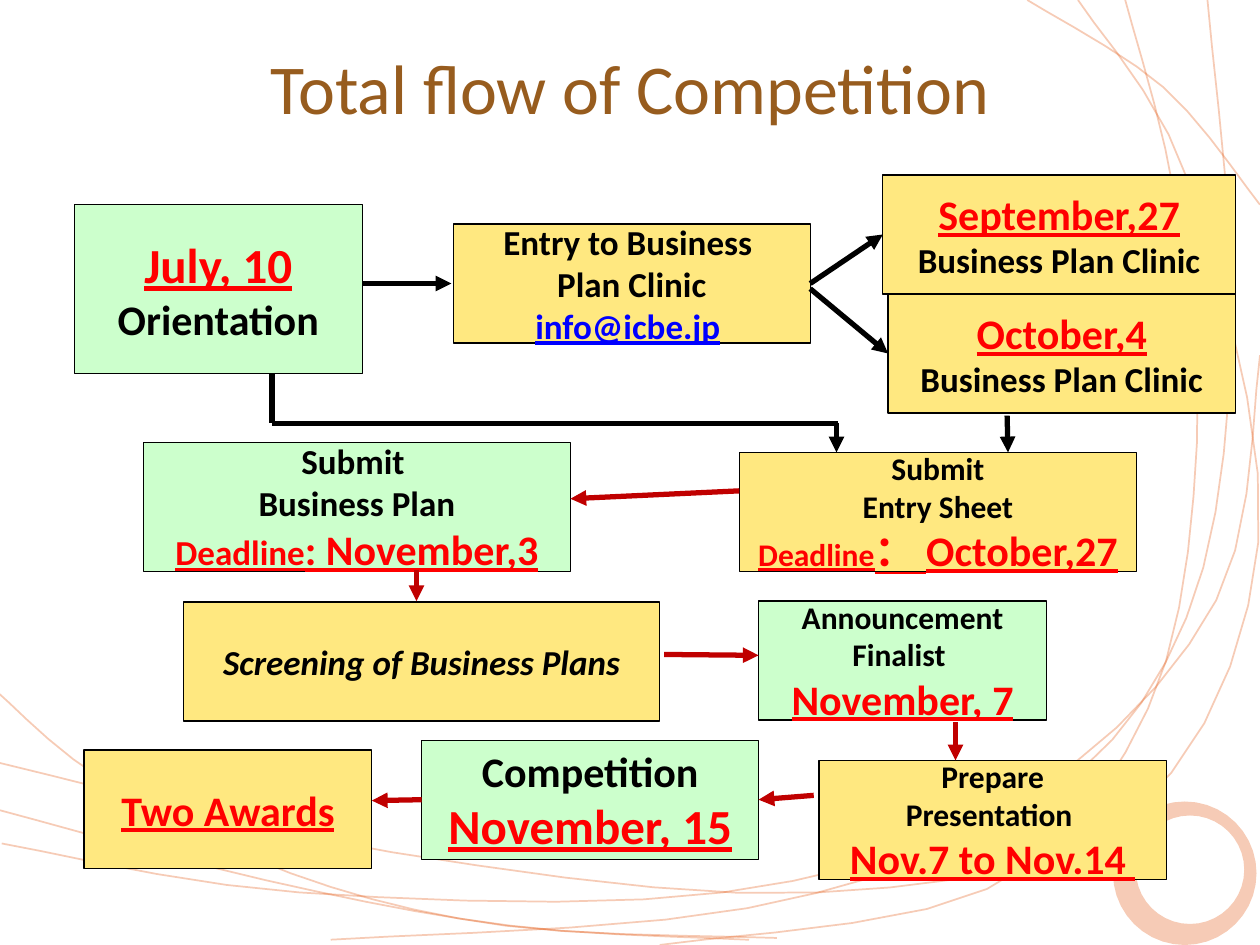
"""Builds the competition flow slide: schedule boxes joined by arrows over curved strands."""
import math
from dataclasses import dataclass

import pptx
import pptx.dml.color
import pptx.enum.shapes
import pptx.enum.text
import pptx.oxml
import pptx.oxml.ns
import pptx.util

Pt = pptx.util.Pt


@dataclass(frozen=True)
class Theme:
    font: str = "Calibri"
    title: str = "975C1E"
    ink: str = "000000"
    date: str = "FF0000"
    address: str = "0000FE"
    milestone: str = "CCFFCC"
    step: str = "FFE880"
    review: str = "C00000"
    strand: str = "E3560E"
    title_size: int = 40
    huge: int = 28
    large: int = 24
    medium: int = 20
    small: int = 18


THEME = Theme()
ROW = 68

STRANDS = [
    [(-2, 395), (58, 445), (166, 499), (289, 529), (444, 536)],
    [(377, 540), (564, 508), (656, 405), (684, 253), (671, 111), (643, 0)],
    [(0, 436), (224, 487), (467, 510), (646, 465), (719, 310), (680, 106), (616, 0)],
    [(1, 482), (171, 510), (413, 510), (586, 455), (695, 343), (720, 203)],
    [(189, 537), (427, 519), (593, 459), (678, 353), (704, 189), (690, 0)],
    [(587, 0), (665, 50), (720, 117)],
    [(0, 463), (152, 503), (292, 529), (428, 537)],
]


def rgb(code):
    """Return the colour for a hex code."""
    return pptx.dml.color.RGBColor.from_string(code)


def add_child(parent, tag, **attributes):
    """Append a drawing element with the given attributes."""
    child = pptx.oxml.parse_xml(f"<a:{tag} {pptx.oxml.ns.nsdecls('a')}/>")
    for key, value in attributes.items():
        child.set(key, value)
    parent.append(child)


def smooth(knots, steps=5):
    """Return points along a smooth curve through the knots."""
    padded = [knots[0], *knots, knots[-1]]
    curve = [knots[0]]
    for a, b, c, d in zip(padded, padded[1:], padded[2:], padded[3:]):
        for step in range(1, steps + 1):
            t = step / steps
            curve.append(tuple(
                q + t * ((r - p) + t * ((2 * p - 5 * q + 4 * r - s) + t * (3 * q - p - 3 * r + s))) / 2
                for p, q, r, s in zip(a, b, c, d)))
    return curve


def circle(x, y, radius, turn=1, steps=40):
    """Return points around a circle in the given direction."""
    angles = (turn * math.tau * step / steps for step in range(steps + 1))
    return [(x + radius * math.cos(angle), y + radius * math.sin(angle)) for angle in angles]


def add_outline(slide, points, closed=False):
    """Draw a translucent strand, or a filled brush mark when closed."""
    pen = slide.shapes.build_freeform(Pt(points[0][0]), Pt(points[0][1]))
    pen.add_line_segments([(Pt(x), Pt(y)) for x, y in points[1:]], close=closed)
    outline = pen.convert_to_shape()
    outline.shadow.inherit = False
    if closed:
        outline.line.fill.background()
        paint = outline.fill
    else:
        outline.fill.background()
        outline.line.width = Pt(1)
        paint = outline.line.fill
    paint.solid()
    paint.fore_color.rgb = rgb(THEME.strand)
    for color in outline._element.spPr.iter(pptx.oxml.ns.qn("a:srgbClr")):
        add_child(color, "alpha", val="30000")


def style(font, size, color, underline=False, italic=False):
    """Apply the bold box lettering to a font."""
    font.name, font.size, font.bold = THEME.font, Pt(size), True
    font.underline, font.italic = underline, italic
    font.color.rgb = rgb(color)


def plain(text, size, italic=False):
    """Describe a black line."""
    return [(text, size, THEME.ink, False, italic)]


def dated(text, size):
    """Describe a red underlined line."""
    return [(text, size, THEME.date, True)]


def add_box(slide, fill, left, top, width, height, *lines):
    """Add a bordered box with centred lines."""
    box = slide.shapes.add_shape(pptx.enum.shapes.MSO_SHAPE.RECTANGLE, Pt(left), Pt(top), Pt(width), Pt(height))
    box.shadow.inherit = False
    box.fill.solid()
    box.fill.fore_color.rgb = rgb(fill)
    box.line.color.rgb, box.line.width = rgb(THEME.ink), Pt(0.75)
    frame = box.text_frame
    frame.word_wrap = False
    frame.vertical_anchor = pptx.enum.text.MSO_ANCHOR.MIDDLE
    for index, spans in enumerate(lines):
        paragraph = frame.add_paragraph() if index else frame.paragraphs[0]
        paragraph.alignment = pptx.enum.text.PP_ALIGN.CENTER
        for text, *look in spans:
            run = paragraph.add_run()
            run.text = text
            style(paragraph.font if len(spans) == 1 else run.font, *look)
    return box


def add_flow(slide, color, start, end, arrow=True, begin=None, finish=None):
    """Add a flow line, joined to (box, side) pairs where given."""
    flow = slide.shapes.add_connector(pptx.enum.shapes.MSO_CONNECTOR.STRAIGHT, *map(Pt, start + end))
    flow.line.color.rgb, flow.line.width = rgb(color), Pt(3)
    if arrow:
        add_child(flow.line._get_or_add_ln(), "tailEnd", type="triangle")
    add_child(flow._element.spPr, "effectLst")
    if begin:
        flow.begin_connect(*begin)
    if finish:
        flow.end_connect(*finish)


def add_title(slide, text):
    """Place and format the slide title."""
    title = slide.shapes.title
    title.left, title.top, title.width, title.height = Pt(36), Pt(21.6), Pt(648), Pt(55.5)
    title.text_frame.text = text
    title.text_frame.vertical_anchor = pptx.enum.text.MSO_ANCHOR.MIDDLE
    heading = title.text_frame.paragraphs[0]
    heading.alignment = pptx.enum.text.PP_ALIGN.CENTER
    heading.font.name, heading.font.size = THEME.font, Pt(THEME.title_size)
    heading.font.color.rgb = rgb(THEME.title)


def main():
    """Build and save the slide."""
    deck = pptx.Presentation()
    deck.slide_width, deck.slide_height = Pt(720), Pt(540)
    slide = deck.slides.add_slide(deck.slide_layouts[5])
    t = THEME
    for strand in STRANDS:
        add_outline(slide, smooth(strand))
    add_outline(slide, circle(677, 499, 41) + circle(680, 497, 31, turn=-1), closed=True)
    add_title(slide, "Total flow of Competition")

    add_box(slide, t.milestone, 42.5, 117, 164.5, 96.5, dated("July, 10", t.huge), plain("Orientation", t.large))
    entry = add_box(slide, t.step, 259, 128, 204, ROW, plain("Entry to Business ", t.medium),
                    plain("Plan Clinic", t.medium),
                    [("info@icbe.jp", t.medium, t.address, True), (" ", t.medium, t.ink)])
    september, october = (
        add_box(slide, t.step, left, top, 706 - left, ROW, dated(day, t.large), plain("Business Plan Clinic", t.medium))
        for day, left, top in [("September,27", 504.5, 100), ("October,4", 507.5, 168)])
    add_box(slide, t.step, 422.5, 258.5, 227, ROW, plain("Submit", t.small), plain("Entry Sheet", t.small),
            dated("Deadline", t.small) + dated("： October,27", t.large))
    add_box(slide, t.step, 105, 344, 272, ROW, plain("Screening of Business Plans", t.medium, italic=True))
    add_box(slide, t.milestone, 82, 253, 244, 73.5, plain("Submit ", t.medium), plain("Business Plan", t.medium),
            dated("Deadline", t.medium) + dated(": November,3", t.large))
    add_box(slide, t.step, 468, 434.5, 198.5, ROW, plain("Prepare", t.small), plain("Presentation ", t.small),
            dated("Nov.7 to Nov.14 ", t.large))
    add_box(slide, t.milestone, 433.5, 343.5, 164.5, ROW, plain("Announcement", t.small),
            plain("Finalist ", t.small), dated("November, 7", t.large))
    add_box(slide, t.step, 48, 428.5, 164.5, ROW, dated("Two Awards", t.large))
    competition = add_box(slide, t.milestone, 241, 423, 192.5, ROW, plain("Competition", t.large),
                          dated("November, 15", t.huge))

    add_flow(slide, t.ink, (207, 162), (258, 162))
    add_flow(slide, t.ink, (463, 165), (507.5, 202), finish=(october, 1))
    add_flow(slide, t.ink, (463, 162), (504.5, 134), begin=(entry, 3), finish=(september, 1))
    add_flow(slide, t.ink, (155.5, 213.5), (155.5, 242), arrow=False)
    add_flow(slide, t.ink, (155.5, 242), (479, 242), arrow=False)
    add_flow(slide, t.ink, (478, 242), (478, 258.5))
    add_flow(slide, t.ink, (575.5, 237.5), (576, 258.5))
    add_flow(slide, t.review, (465, 454.5), (433.5, 457), finish=(competition, 3))
    add_flow(slide, t.review, (546, 412.5), (546, 434.5))
    add_flow(slide, t.review, (379.5, 374), (433.5, 374.5))
    add_flow(slide, t.review, (238, 325.5), (238, 343.5))
    add_flow(slide, t.review, (422.5, 280.5), (326, 285))
    add_flow(slide, t.review, (241, 457), (212.5, 457.5), begin=(competition, 1))
    deck.save("out.pptx")


if __name__ == "__main__":
    main()
